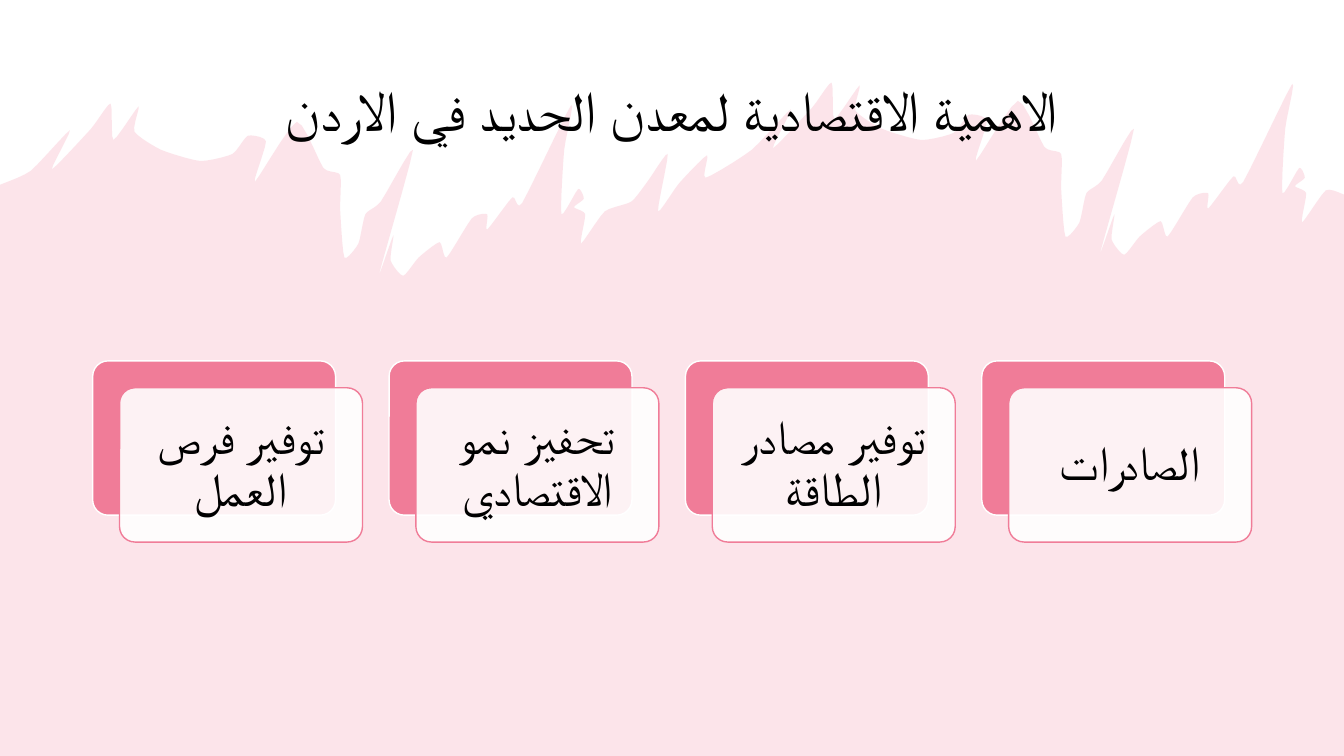
from lxml import etree
from pptx import Presentation
from pptx.dml.color import RGBColor
from pptx.enum import shapes, text
from pptx.oxml.ns import qn
from pptx.util import Pt

# Content
HEADING = ("الاهمية الاقتصادية لمعدن الحديد في الاردن", "League Spartan")
BENEFITS = [
    ("توفير فرص العمل", "League Spartan"),
    ("تحفيز نمو الاقتصادي", "Arial"),
    ("توفير مصادر الطاقة", "Arial"),
    ("الصادرات", "Arial"),
]
COLORS = {"pink": "F07C98", "white": "FFFFFF", "ink": "000000"}

# Brush edge: one stroke, used twice, and the bridge between the two
STROKE = [
    (22, 122), (50, 93), (37, 121), (65, 92), (79, 74), (81, 100), (99, 76),
    (96, 94), (115, 107), (143, 115), (166, 110), (177, 97), (190, 101),
    (182, 130), (212, 87), (231, 120), (243, 125), (243, 150), (246, 184),
    (256, 174), (261, 153), (272, 144), (295, 107), (271, 195), (281, 168),
    (279, 186), (288, 197), (299, 184), (314, 173), (319, 184), (337, 156),
    (348, 153), (348, 164), (366, 141), (373, 145), (408, 75), (403, 107),
    (401, 153), (413, 135), (417, 142), (410, 148), (418, 153), (415, 174),
    (432, 151),
]
BRIDGE = [(451, 144), (463, 129), (477, 110), (470, 151), (485, 131), (505, 111), (504, 127)]
STROKE_SHIFT = (515, -15)

# Layout in points
SLIDE_W, SLIDE_H = 960, 540
EDGE_LEFT, EDGE_RIGHT = (0, 132), (SLIDE_W, 139)
CARD_LEFT, CARD_TOP, CARD_W, CARD_H = 66.2, 257.8, 173.5, 110.2
CARD_STEP, FRONT_OFFSET, CARD_INSET = 211.7, 19.2, 13.3
CURVE_STEPS, CURVE_PULL = 5, 0.3


def smooth(points):
    """Return a gently curved line through the points."""
    padded = points[:1] + points + points[-1:]
    curve = []
    for before, start, end, after in zip(padded, padded[1:], padded[2:], padded[3:]):
        for step in range(CURVE_STEPS):
            t = step / CURVE_STEPS
            ease = t * t * (3 - 2 * t)
            curve.append(tuple(
                s + (e - s) * ease
                + CURVE_PULL * t * (1 - t) * ((e - b) * (1 - t) - (a - s) * t)
                for b, s, e, a in zip(before, start, end, after)))
    return curve + points[-1:]


def paint(shape, fill, line=None, opacity=100):
    shape.shadow.inherit = False
    shape.fill.solid()
    shape.fill.fore_color.rgb = RGBColor.from_string(COLORS[fill])
    if opacity < 100:
        color = shape.fill._xPr.find(qn("a:solidFill"))[0]
        etree.SubElement(color, qn("a:alpha")).set("val", str(opacity * 1000))
    if line:
        shape.line.color.rgb = RGBColor.from_string(COLORS[line])
        shape.line.width = Pt(1)
    else:
        shape.line.fill.background()


def write(shape, words, font, size):
    frame = shape.text_frame
    frame.text = words
    frame.word_wrap = True
    frame.vertical_anchor = text.MSO_ANCHOR.MIDDLE
    paragraph = frame.paragraphs[0]
    paragraph.alignment = text.PP_ALIGN.CENTER
    paragraph.line_spacing = 0.9
    run = paragraph.runs[0]
    run.font.size = Pt(size)
    run.font.name = font
    run.font.color.rgb = RGBColor.from_string(COLORS["ink"])
    # Arabic letters take the complex-script font
    etree.SubElement(run.font._element, qn("a:cs")).set("typeface", font)


def add_card(slide, left, top):
    card = slide.shapes.add_shape(
        shapes.MSO_SHAPE.ROUNDED_RECTANGLE, Pt(left), Pt(top), Pt(CARD_W), Pt(CARD_H))
    card.adjustments[0] = 0.1
    return card


def main():
    deck = Presentation()
    deck.slide_width, deck.slide_height = Pt(SLIDE_W), Pt(SLIDE_H)
    slide = deck.slides.add_slide(deck.slide_layouts[5])

    # Brushed background
    dx, dy = STROKE_SHIFT
    repeated = [(x + dx, y + dy) for x, y in STROKE]
    edge = smooth([EDGE_LEFT] + STROKE + BRIDGE + repeated + [EDGE_RIGHT])
    outline = edge + [(SLIDE_W, SLIDE_H), (0, SLIDE_H)]
    corners = [(Pt(x), Pt(y)) for x, y in outline]
    builder = slide.shapes.build_freeform(*corners[0])
    builder.add_line_segments(corners[1:], close=True)
    paint(builder.convert_to_shape(), "pink", opacity=20)

    # Heading, in front of the background
    heading = slide.shapes.title
    heading.left, heading.top, heading.width, heading.height = Pt(66), Pt(28.8), Pt(828), Pt(104.4)
    write(heading, *HEADING, 40)
    slide.shapes._spTree.append(heading._element)

    # Benefit cards
    for i, (words, font) in enumerate(BENEFITS):
        left = CARD_LEFT + i * CARD_STEP
        paint(add_card(slide, left, CARD_TOP), "pink", line="white")
        front = add_card(slide, left + FRONT_OFFSET, CARD_TOP + FRONT_OFFSET)
        paint(front, "white", line="pink", opacity=90)
        write(front, words, font, 34)
        frame = front.text_frame
        frame.margin_left = frame.margin_right = Pt(CARD_INSET)
        frame.margin_top = frame.margin_bottom = Pt(CARD_INSET)

    deck.save("out.pptx")


if __name__ == "__main__":
    main()
